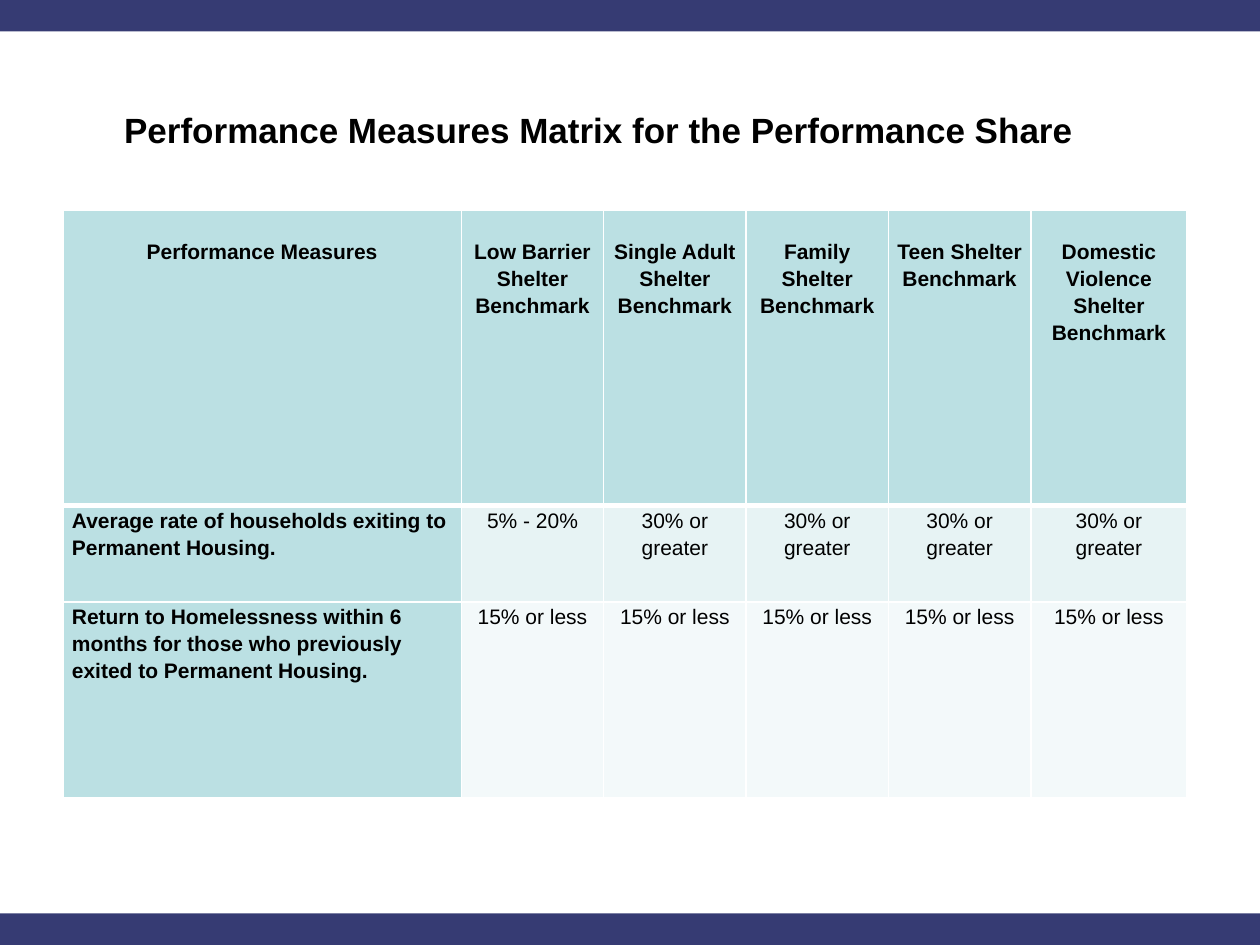
from lxml.etree import SubElement
from pptx import Presentation
from pptx.dml.color import RGBColor
from pptx.enum.shapes import MSO_SHAPE
from pptx.enum.text import MSO_ANCHOR, PP_ALIGN
from pptx.oxml.ns import qn
from pptx.util import Cm, Pt


class Theme:
    font = "Arial"
    navy = RGBColor.from_string("363B73")
    white = RGBColor.from_string("FFFFFF")
    black = RGBColor.from_string("000000")
    teal = RGBColor.from_string("BBE0E3")
    bands = [RGBColor.from_string("E7F3F4"), RGBColor.from_string("F3F9FA")]
    title_size = Pt(20)
    table_size = Pt(12)


def write(tf, text, size=Theme.table_size, bold=False, align=PP_ALIGN.CENTER, spacing=None):
    """Write each line of text as one formatted paragraph."""
    tf.word_wrap = True
    for i, line in enumerate(text.split("\n")):
        p = tf.paragraphs[0] if i == 0 else tf.add_paragraph()
        p.alignment = align
        p.line_spacing = spacing
        r = p.add_run()
        r.text = line
        r.font.name = Theme.font
        r.font.size = size
        r.font.bold = bold
        r.font.color.rgb = Theme.black


def add_borders(cell, **widths):
    """Draw white cell borders; widths in points, keyed by side."""
    tc_pr = cell._tc.get_or_add_tcPr()
    for side in "LRTB":
        ln = SubElement(tc_pr, qn(f"a:ln{side}"), w=str(Pt(widths.get(side, 1))))
        fill = SubElement(ln, qn("a:solidFill"))
        SubElement(fill, qn("a:srgbClr"), val=str(Theme.white))


prs = Presentation()
prs.slide_width, prs.slide_height = Cm(25.4), Cm(19.05)
s = prs.slides.add_slide(prs.slide_layouts[6])

# Navy background with a white panel, leaving a band above and below
s.background.fill.solid()
s.background.fill.fore_color.rgb = Theme.navy
band = Cm(0.635)
sp = s.shapes.add_shape(MSO_SHAPE.RECTANGLE, 0, band, prs.slide_width,
                        prs.slide_height - 2 * band)
sp.shadow.inherit = False
sp.fill.solid()
sp.fill.fore_color.rgb = Theme.white
sp.line.fill.background()

# Benchmark table
rows = [
    ["Performance Measures", "Low Barrier\nShelter Benchmark",
     "Single Adult\nShelter Benchmark", "Family Shelter Benchmark",
     "Teen Shelter Benchmark", "Domestic Violence Shelter Benchmark"],
    ["Average rate of households exiting to Permanent Housing.", "5% - 20%"]
    + ["30% or greater"] * 4,
    ["Return to Homelessness within 6 months for those who previously "
     "exited to Permanent Housing."] + ["15% or less"] * 5,
]
col_widths = [Cm(8.03)] + [Cm(2.87)] * 4 + [Cm(3.15)]
row_heights = [Cm(5.95), Cm(1.95), Cm(3.95)]
table = s.shapes.add_table(len(rows), len(col_widths), Cm(1.27), Cm(4.24),
                           sum(col_widths), sum(row_heights)).table
for column, width in zip(table.columns, col_widths):
    column.width = width
for row, height in zip(table.rows, row_heights):
    row.height = height

for i, texts in enumerate(rows):
    for j, text in enumerate(texts):
        cell = table.cell(i, j)
        header, label = i == 0, j == 0
        cell.margin_left = cell.margin_right = Cm(0.18)
        cell.margin_top = Cm(0.54) if header else 0
        cell.margin_bottom = 0
        add_borders(cell, T=3 if i == 1 else 1, B=3 if header else 1)
        cell.fill.solid()
        cell.fill.fore_color.rgb = Theme.teal if header or label else Theme.bands[i - 1]
        write(cell.text_frame, text, bold=header or label, spacing=1.15,
              align=PP_ALIGN.LEFT if label and not header else PP_ALIGN.CENTER)

# Title
tf = s.shapes.add_textbox(Cm(0.64), Cm(2.03), Cm(22.86), Cm(1.17)).text_frame
tf.vertical_anchor = MSO_ANCHOR.MIDDLE
write(tf, "Performance Measures Matrix for the Performance Share",
      size=Theme.title_size, bold=True)

prs.save("out.pptx")
